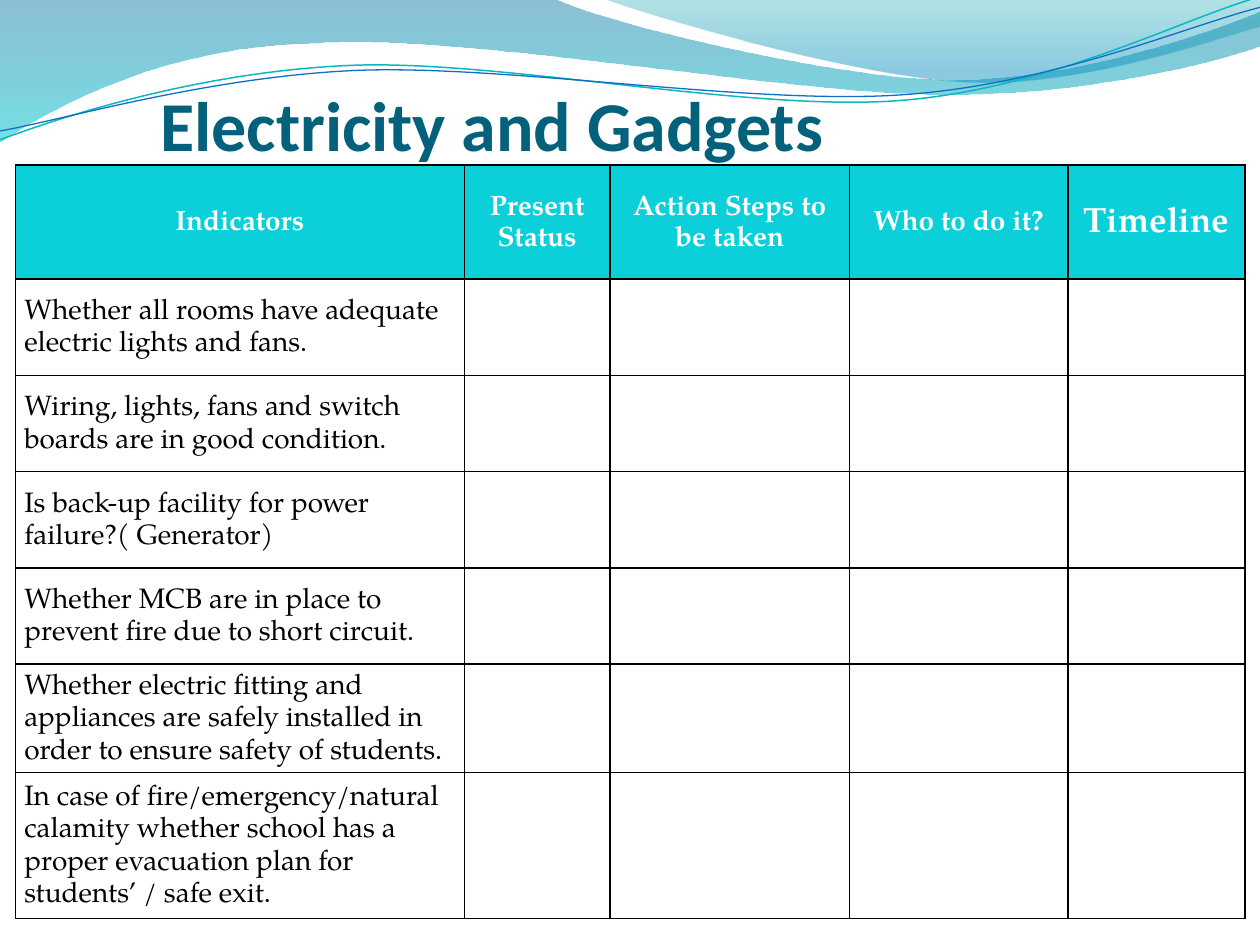
from lxml import etree
from pptx import Presentation
from pptx.dml.color import RGBColor
from pptx.enum.text import MSO_ANCHOR, PP_ALIGN
from pptx.oxml.ns import qn
from pptx.util import Cm, Pt

LEFT, CENTER = PP_ALIGN.LEFT, PP_ALIGN.CENTER
MIDDLE, BOTTOM = MSO_ANCHOR.MIDDLE, MSO_ANCHOR.BOTTOM

WHITE = RGBColor(0xFF, 0xFF, 0xFF)
BLACK = RGBColor(0x00, 0x00, 0x00)
TITLE_BLUE = RGBColor(0x04, 0x61, 0x7B)
HEADER_TEAL = RGBColor(0x0B, 0xD0, 0xD9)
LINE_TEAL = RGBColor(0x0A, 0xB8, 0xBF)
LINE_BLUE = RGBColor(0x0F, 0x6F, 0xC6)
DEEP_BLUE = RGBColor(0x00, 0x74, 0xA1)
AQUA = RGBColor(0x00, 0xC6, 0xCF)
SEA_GREEN = RGBColor(0x00, 0xA1, 0xA9)
SKY_BLUE = RGBColor(0x00, 0x8B, 0xBF)

TITLE_FONT, TABLE_FONT = "Calibri", "TeX Gyre Pagella"

# Outlines in cm: a start point, then segments of one point (straight)
# or three points (two controls and the end of a curve).
LARGE_WAVE = [
    (0, 0),
    [(11.18, -0.03)],
    [(12.09, 0.43), (16.87, 1.6), (19.25, 1.6)],
    [(21.67, 1.6), (24.33, 0.66), (25.4, 0.23)],
    [(25.43, 0.91)],
    [(24.97, 1.12), (22.1, 1.93), (18.95, 1.9)],
    [(15.8, 1.9), (9.7, 0.71), (6.53, 0.86)],
    [(3.28, 0.91), (1.17, 2.11), (-0.03, 2.87)],
    [(0, 0)],
]
SMALL_WAVE = [
    (12.17, -0.03),
    [(12.93, 0.28), (17.32, 1.57), (19.53, 1.65)],
    [(21.74, 1.75), (24.41, 0.81), (25.4, 0.53)],
    [(25.4, 0)],
    [(12.17, -0.03)],
]
TEAL_CURVE = [
    (0, 2.82),
    [(1.22, 2.36), (4.01, 1.45), (7.04, 1.32)],
    [(10.03, 1.19), (15.06, 2.26), (18.11, 2.03)],
    [(21.16, 1.8), (23.83, 0.38), (25.35, -0.05)],
]
BLUE_CURVE = [
    (0, 2.64),
    [(1.19, 2.44), (4.17, 1.55), (7.19, 1.42)],
    [(10.24, 1.3), (15.16, 2.13), (18.21, 1.91)],
    [(21.23, 1.7), (23.9, 0.53), (25.4, 0.15)],
]

COLUMN_WIDTHS = [9.05, 2.94, 4.82, 4.41, 3.57]
ROW_HEIGHTS = [2.3] + [1.94] * 4 + [2.18, 2.95]
FIRST_TIGHT_ROW = 5
HEADERS = ["Indicators", "Present Status", "Action Steps to be taken",
           "Who to do it?", "Timeline"]
INDICATORS = [
    "Whether all rooms have adequate electric lights and fans.",
    "Wiring, lights, fans and switch boards are in good condition.",
    "Is back-up facility for power failure?( Generator)",
    "Whether MCB are in place to prevent fire due to short circuit.",
    "Whether electric fitting and appliances are safely installed in order "
    "to ensure safety of students.",
    "In case of fire/emergency/natural calamity whether school has a proper "
    "evacuation plan for students’ / safe exit.",
]


def add_outline(page, outline, closed):
    """Freeform whose three-point segments become cubic curves."""
    start, *segments = outline
    builder = page.shapes.build_freeform(Cm(start[0]), Cm(start[1]))
    for segment in segments:
        builder.add_line_segments([(Cm(x), Cm(y)) for x, y in segment], close=False)
    shape = builder.convert_to_shape()
    shape.shadow.inherit = False

    lines = iter(list(shape._element.iter(qn("a:lnTo"))))
    for segment in segments:
        pieces = [next(lines) for _ in segment]
        if len(pieces) == 3:
            curve = etree.Element(qn("a:cubicBezTo"))
            pieces[0].addprevious(curve)
            for piece in pieces:
                curve.append(piece[0])
                piece.getparent().remove(piece)
    if closed:
        outline_element = next(shape._element.iter(qn("a:path")))
        etree.SubElement(outline_element, qn("a:close"))
    return shape


def add_wave(page, outline, stops):
    """Filled wave; each stop is position, colour and opacity in percent."""
    shape = add_outline(page, outline, closed=True)
    shape.line.fill.background()
    shape.fill.gradient()
    shape.fill.gradient_angle = 270
    for stop, (position, color, _) in zip(shape.fill.gradient_stops, stops):
        stop.position = position
        stop.color.rgb = color
    colors = shape._element.spPr.iter(qn("a:srgbClr"))
    for color_element, (_, _, opacity) in zip(colors, stops):
        etree.SubElement(color_element, qn("a:alpha"), val=str(opacity * 1000))


def add_curve(page, outline, color, width):
    shape = add_outline(page, outline, closed=False)
    shape.fill.background()
    shape.line.color.rgb = color
    shape.line.width = Pt(width)


def write_text(frame, text, font=TABLE_FONT, size=16, color=BLACK, bold=False,
               align=LEFT, spacing=1.15):
    frame.word_wrap = True
    para = frame.paragraphs[0]
    para.alignment = align
    para.line_spacing = spacing
    span = para.add_run()
    span.text = text
    span.font.name = font
    span.font.size = Pt(size)
    span.font.bold = bold
    span.font.color.rgb = color


def add_title(page, text):
    box = page.shapes.add_textbox(Cm(2.7), Cm(1.32), Cm(14.43), Cm(2.01))
    frame = box.text_frame
    frame.margin_left = frame.margin_right = frame.margin_bottom = 0
    frame.vertical_anchor = BOTTOM
    write_text(frame, text, font=TITLE_FONT, size=40, color=TITLE_BLUE,
               bold=True, align=CENTER, spacing=1.0)


def add_borders(cell):
    properties = cell._tc.get_or_add_tcPr()
    for index, side in enumerate(("a:lnL", "a:lnR", "a:lnT", "a:lnB")):
        line = etree.Element(qn(side), w=str(Pt(1)))
        fill = etree.SubElement(line, qn("a:solidFill"))
        etree.SubElement(fill, qn("a:srgbClr"), val=str(BLACK))
        properties.insert(index, line)


def add_checklist(page):
    table = page.shapes.add_table(
        len(ROW_HEIGHTS), len(COLUMN_WIDTHS), Cm(0.31), Cm(3.33),
        Cm(sum(COLUMN_WIDTHS)), Cm(sum(ROW_HEIGHTS))).table
    table.first_row = table.horz_banding = False
    for column, width in zip(table.columns, COLUMN_WIDTHS):
        column.width = Cm(width)
    for row, height in zip(table.rows, ROW_HEIGHTS):
        row.height = Cm(height)
    for cell in table.iter_cells():
        cell.fill.background()
        cell.margin_left = cell.margin_right = Cm(0.18)
        cell.margin_top = cell.margin_bottom = 0
        cell.vertical_anchor = MIDDLE
        add_borders(cell)
    for column, text in enumerate(HEADERS):
        cell = table.cell(0, column)
        cell.fill.solid()
        cell.fill.fore_color.rgb = HEADER_TEAL
        write_text(cell.text_frame, text, size=20 if text == "Timeline" else 16,
                   color=WHITE, bold=True, align=CENTER)
    for row, text in enumerate(INDICATORS, start=1):
        # Exact spacing keeps the longest texts within their row heights.
        spacing = Pt(18.5) if row >= FIRST_TIGHT_ROW else 1.15
        write_text(table.cell(row, 0).text_frame, text, spacing=spacing)


def main():
    deck = Presentation()
    deck.slide_width, deck.slide_height = Cm(25.4), Cm(19.05)
    page = deck.slides.add_slide(deck.slide_layouts[6])
    add_wave(page, LARGE_WAVE, [(0, DEEP_BLUE, 45), (1, AQUA, 55)])
    add_wave(page, SMALL_WAVE, [(0, SEA_GREEN, 30), (0.8, SKY_BLUE, 45)])
    add_curve(page, TEAL_CURVE, LINE_TEAL, 0.85)
    add_curve(page, BLUE_CURVE, LINE_BLUE, 0.75)
    add_title(page, "Electricity and Gadgets")
    add_checklist(page)
    deck.save("out.pptx")


if __name__ == "__main__":
    main()
